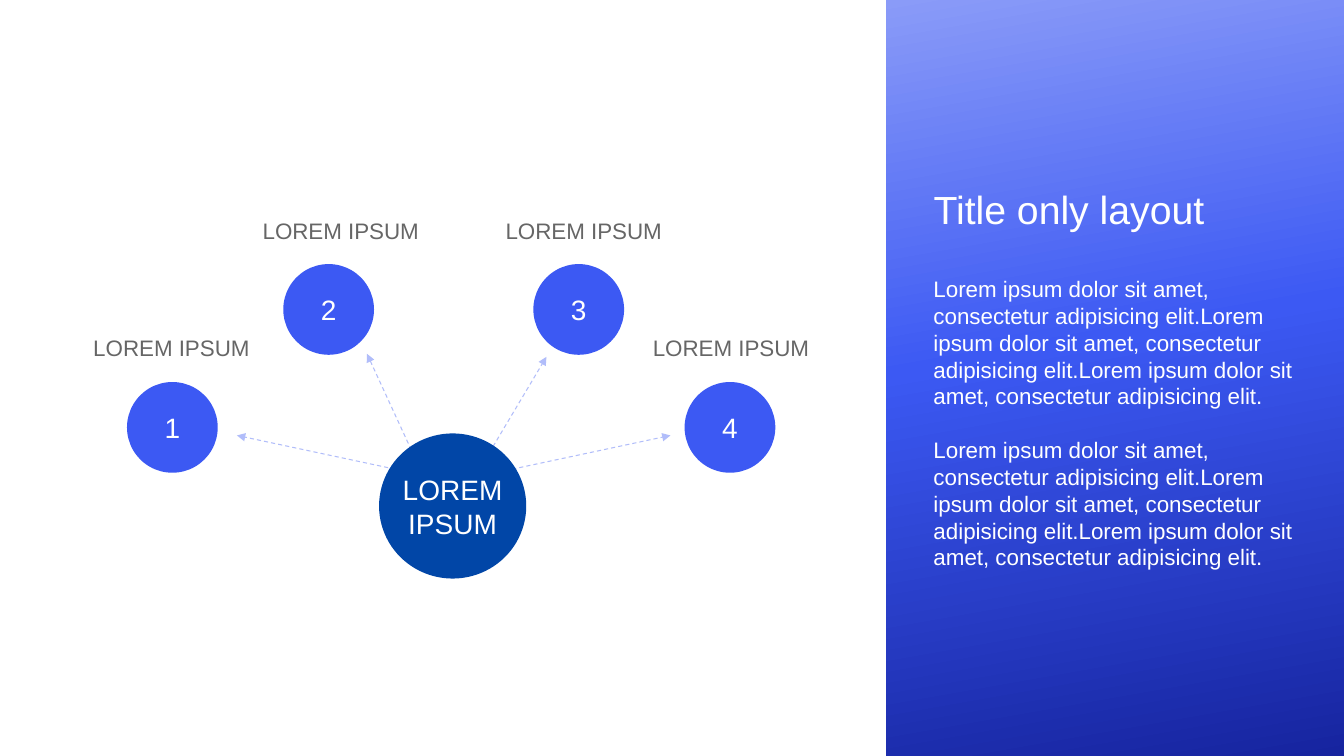
from copy import deepcopy
from dataclasses import dataclass

from lxml.etree import SubElement
from pptx import Presentation
from pptx.dml.color import RGBColor
from pptx.enum.dml import MSO_LINE
from pptx.enum.shapes import MSO_CONNECTOR, MSO_SHAPE
from pptx.enum.text import MSO_ANCHOR, MSO_AUTO_SIZE, PP_ALIGN
from pptx.oxml.ns import qn
from pptx.util import Inches, Pt

COLOURS = {
    "node": "3C59F3",
    "hub": "0146A7",
    "arrow": "B1BDFA",
    "label": "666666",
    "light": "FFFFFF",
}
PANEL_STOPS = [(0, "16249F"), (0.55, "3C59F3"), (1, "8A9BF8")]
FONT = "Arial"
NODE_SIZE = 0.9
LABEL_RISE = 0.6
SENTENCE = "Lorem ipsum dolor sit amet, consectetur adipisicing elit."


@dataclass
class Node:
    number: str
    left: float
    top: float
    label_left: float
    arrow_start: tuple[float, float]
    arrow_end: tuple[float, float]


NODES = [
    Node("1", 1.26, 3.79, 0.74, (3.99, 4.67), (2.35, 4.32)),
    Node("2", 2.81, 2.62, 2.42, (4.11, 4.53), (3.64, 3.51)),
    Node("3", 5.29, 2.62, 4.83, (4.89, 4.43), (5.42, 3.54)),
    Node("4", 6.79, 3.79, 6.29, (5.01, 4.67), (6.65, 4.32)),
]


def colour(name: str) -> RGBColor:
    return RGBColor.from_string(COLOURS[name])


def write(frame, *texts: str, size: float, ink: str = "light", align=PP_ALIGN.LEFT,
          anchor=MSO_ANCHOR.TOP, spacing: float = 1.0, gap: float = 0,
          wrap: bool = True) -> None:
    """Fill a text frame with one paragraph per text."""
    frame.word_wrap = wrap
    frame.auto_size = MSO_AUTO_SIZE.NONE
    frame.vertical_anchor = anchor
    for index, text in enumerate(texts):
        para = frame.add_paragraph() if index else frame.paragraphs[0]
        para.alignment = align
        para.line_spacing = spacing
        para.space_before = Pt(gap if index else 0)
        span = para.add_run()
        span.text = text
        span.font.name = FONT
        span.font.size = Pt(size)
        span.font.color.rgb = colour(ink)


def add_text(page, left: float, top: float, width: float, height: float,
             *texts: str, **style) -> None:
    box = page.shapes.add_textbox(*map(Inches, (left, top, width, height)))
    write(box.text_frame, *texts, **style)


def add_plain_shape(page, kind, left: float, top: float, width: float, height: float):
    shape = page.shapes.add_shape(kind, *map(Inches, (left, top, width, height)))
    shape.shadow.inherit = False
    shape.line.fill.background()
    return shape


def add_circle(page, left: float, top: float, width: float, height: float,
               text: str, fill: str, wrap: bool = False):
    circle = add_plain_shape(page, MSO_SHAPE.OVAL, left, top, width, height)
    circle.fill.solid()
    circle.fill.fore_color.rgb = colour(fill)
    write(circle.text_frame, text, size=20, align=PP_ALIGN.CENTER,
          anchor=MSO_ANCHOR.MIDDLE, wrap=wrap)
    return circle


def add_arrow(page, start: tuple[float, float], end: tuple[float, float]) -> None:
    arrow = page.shapes.add_connector(MSO_CONNECTOR.STRAIGHT, *map(Inches, start + end))
    arrow.line.color.rgb = colour("arrow")
    arrow.line.width = Pt(0.75)
    arrow.line.dash_style = MSO_LINE.DASH
    SubElement(arrow.line._get_or_add_ln(), qn("a:tailEnd"), type="triangle")
    SubElement(arrow._element.spPr, qn("a:effectLst"))


def add_panel(page) -> None:
    panel = add_plain_shape(page, MSO_SHAPE.RECTANGLE, 8.79, 0, 4.54, 7.5)
    panel.fill.gradient()
    panel.fill.gradient_angle = 100
    # A new gradient has two stops; add the third
    stop_list = panel._element.spPr.find(".//" + qn("a:gsLst"))
    stop_list.append(deepcopy(stop_list[0]))
    for stop, (position, shade) in zip(panel.fill.gradient_stops, PANEL_STOPS):
        stop.position = position
        stop.color.rgb = RGBColor.from_string(shade)


def add_title(page, text: str) -> None:
    title = page.shapes.title
    title.left, title.top, title.width, title.height = map(Inches, (9.16, 1.79, 3.83, 0.57))
    write(title.text_frame, text, size=28)
    # Bring the title in front of the panel
    page.shapes._spTree.append(title._element)


def main() -> None:
    deck = Presentation()
    deck.slide_width, deck.slide_height = Inches(13.33), Inches(7.5)
    page = deck.slides.add_slide(deck.slide_layouts[5])

    # Numbered nodes around the hub
    for node in NODES:
        add_arrow(page, node.arrow_start, node.arrow_end)
        add_circle(page, node.left, node.top, NODE_SIZE, NODE_SIZE, node.number, "node")
        add_text(page, node.label_left, node.top - LABEL_RISE, 1.92, 0.51, "LOREM IPSUM",
                 size=16, ink="label", align=PP_ALIGN.CENTER, spacing=1.3)

    # Hub, covering the arrow starts
    hub = add_circle(page, 3.76, 4.3, 1.46, 1.44, "LOREM IPSUM", "hub", wrap=True)
    frame = hub.text_frame
    frame.margin_left = frame.margin_top = frame.margin_right = frame.margin_bottom = 0

    # Side panel with title and body
    add_panel(page)
    add_title(page, "Title only layout")
    add_text(page, 9.16, 2.68, 3.82, 3.48, SENTENCE * 3, SENTENCE * 3, size=16, gap=19)

    deck.save("out.pptx")


if __name__ == "__main__":
    main()
